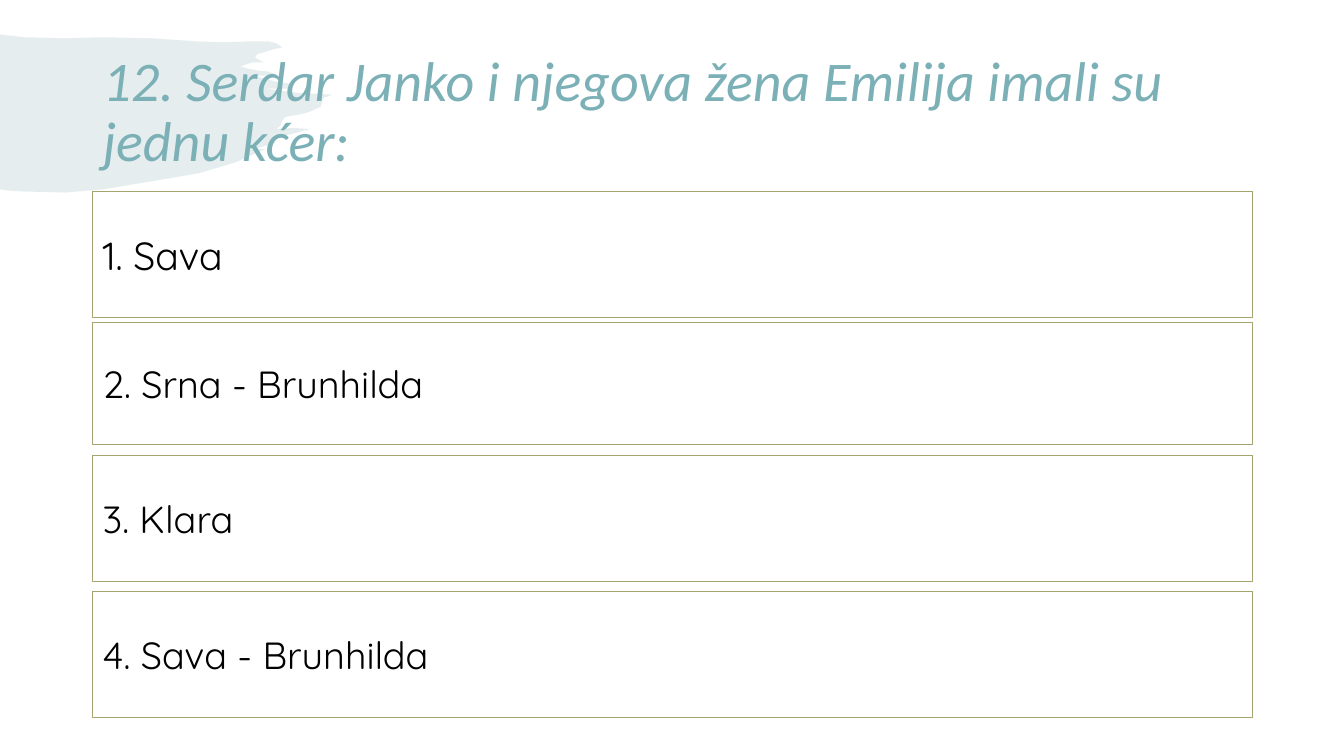
"""Build a quiz slide with a question and four answer boxes."""
from dataclasses import dataclass

from lxml.etree import SubElement
from pptx import Presentation
from pptx.dml.color import RGBColor
from pptx.dml.fill import FillFormat
from pptx.enum.shapes import MSO_SHAPE as Kind
from pptx.enum.text import MSO_ANCHOR as Anchor, MSO_AUTO_SIZE as Fit, PP_ALIGN as Align
from pptx.oxml.ns import qn
from pptx.shapes.base import BaseShape
from pptx.slide import Slide
from pptx.text.text import TextFrame
from pptx.util import Inches, Pt

LEFT, WIDTH = 0.92, 11.5
BRUSH = [
    (0, 0.34), (0.06, 0.35), (0.25, 0.37), (0.66, 0.38), (1.02, 0.37), (1.51, 0.38),
    (1.94, 0.41), (2.22, 0.42), (2.48, 0.41), (2.66, 0.41), (2.74, 0.43), (2.8, 0.47),
    (2.71, 0.49), (2.55, 0.54), (2.53, 0.57), (2.56, 0.59), (2.62, 0.62), (2.5, 0.62),
    (2.38, 0.66), (2.46, 0.68), (2.56, 0.7), (2.66, 0.71), (2.75, 0.74), (2.63, 0.75),
    (2.51, 0.75), (2.63, 0.78), (2.73, 0.81), (2.8, 0.82), (2.88, 0.83), (2.9, 0.85),
    (2.87, 0.88), (2.84, 0.88), (2.63, 0.88), (2.95, 0.92), (3.3, 0.94), (3.21, 0.97),
    (3.18, 1.06), (3.07, 1.11), (3, 1.13), (2.83, 1.16), (2.8, 1.2), (2.78, 1.25),
    (2.74, 1.28), (2.91, 1.27), (3.08, 1.28), (2.89, 1.33), (2.69, 1.38), (2.73, 1.42),
    (2.62, 1.45), (2.52, 1.48), (2.63, 1.48), (2.34, 1.61), (1.97, 1.72), (1.02, 1.88),
    (0.65, 1.91), (0.23, 1.9), (0.07, 1.89), (0, 1.88),
]


@dataclass
class Answer:
    text: str
    top: float
    height: float = 1.25
    size: int = 27
    before: int = 0


ANSWERS = [
    Answer("1. Sava", 1.9, size=28, before=10),
    Answer("2. Srna - Brunhilda", 3.2, height=1.21),
    Answer("3. Klara", 4.52),
    Answer("4. Sava - Brunhilda", 5.87),
]


def paint(fill: FillFormat, tint: str) -> None:
    fill.solid()
    fill.fore_color.rgb = RGBColor.from_string(tint)


def place(shape: BaseShape, top: float, height: float) -> None:
    shape.left, shape.top = Inches(LEFT), Inches(top)
    shape.width, shape.height = Inches(WIDTH), Inches(height)


def write(frame: TextFrame, text: str, face: str, size: int, tint: str) -> None:
    frame.text = text
    frame.word_wrap = True
    frame.auto_size = Fit.NONE
    frame.vertical_anchor = Anchor.MIDDLE
    line = frame.paragraphs[0]
    line.alignment = Align.LEFT
    font = line.runs[0].font
    font.name, font.size = face, Pt(size)
    font.color.rgb = RGBColor.from_string(tint)


def add_brush(slide: Slide) -> None:
    dots = [(Inches(x), Inches(y)) for x, y in BRUSH]
    pen = slide.shapes.build_freeform(*dots[0])
    pen.add_line_segments(dots[1:], close=True)
    brush = pen.convert_to_shape()
    brush.shadow.inherit = False
    paint(brush.fill, "82A8AB")
    brush.line.fill.background()
    tone = brush.element.spPr.find(f"{qn('a:solidFill')}/{qn('a:srgbClr')}")
    SubElement(tone, qn("a:alpha"), val="20000")
    slide.shapes.title.element.addprevious(brush.element)


def add_title(slide: Slide) -> None:
    title = slide.shapes.title
    place(title, 0.4, 1.45)
    text = "12. Serdar Janko i njegova žena Emilija imali su jednu kćer:"
    write(title.text_frame, text, "Calibri", 40, "7BB0B6")
    line = title.text_frame.paragraphs[0]
    line.line_spacing = 0.9
    line.runs[0].font.italic = True


def add_answer(slide: Slide, answer: Answer) -> None:
    area = [Inches(n) for n in (LEFT, answer.top, WIDTH, answer.height)]
    box = slide.shapes.add_shape(Kind.ACTION_BUTTON_CUSTOM, *area)
    box.shadow.inherit = False
    paint(box.fill, "FFFFFF")
    paint(box.line.fill, "A4A470")
    box.line.width = Pt(1)
    write(box.text_frame, answer.text, "Quicksand", answer.size, "000000")
    box.text_frame.paragraphs[0].space_before = Pt(answer.before)


def main() -> None:
    deck = Presentation()
    deck.slide_width, deck.slide_height = Inches(13.33), Inches(7.5)
    slide = deck.slides.add_slide(deck.slide_layouts[5])
    paint(slide.background.fill, "FFFFFF")
    add_title(slide)
    add_brush(slide)
    for answer in ANSWERS:
        add_answer(slide, answer)
    deck.save("out.pptx")


if __name__ == "__main__":
    main()
